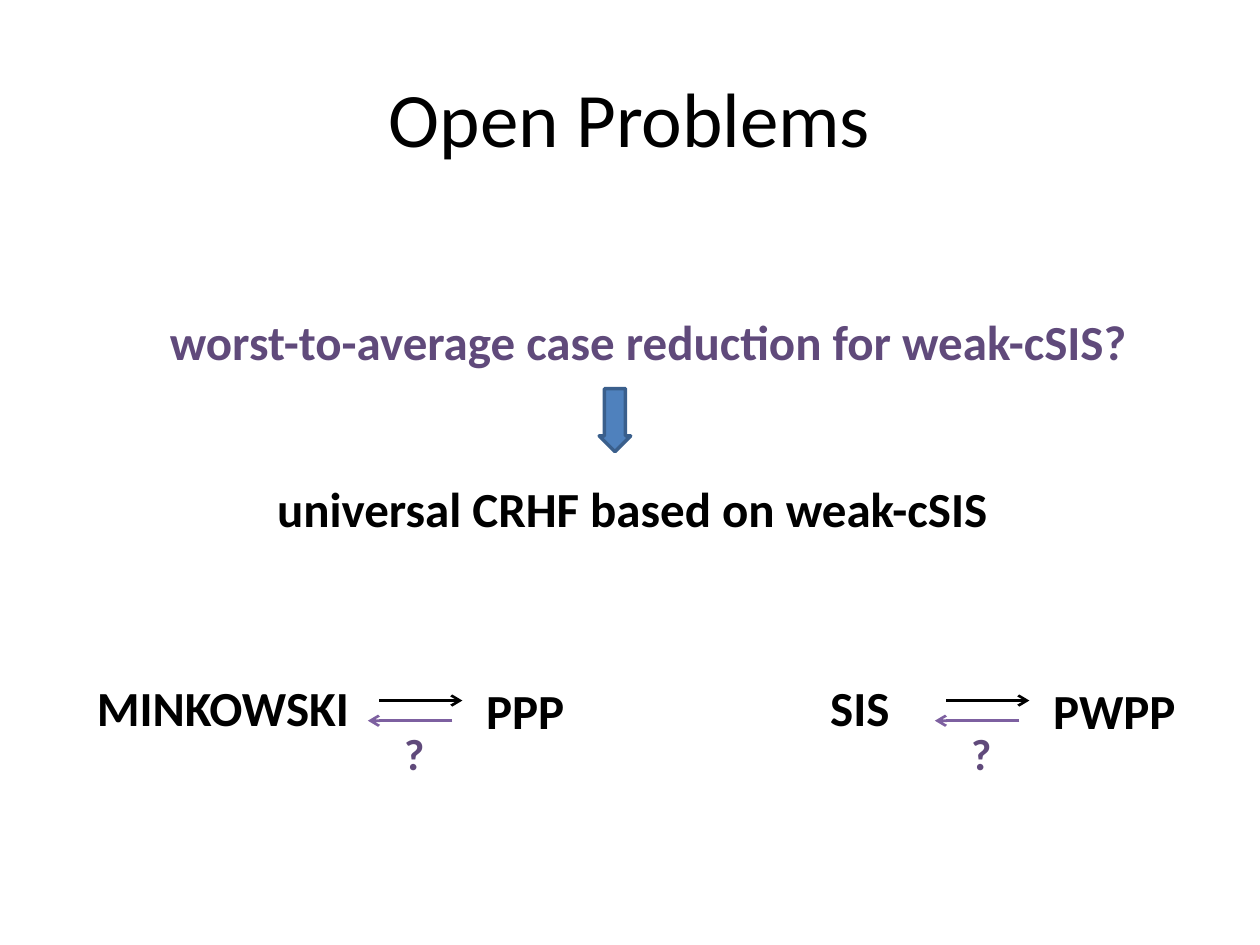
from lxml import etree
from pptx import Presentation
from pptx.dml.color import RGBColor
from pptx.enum import shapes, text
from pptx.oxml.ns import qn
from pptx.util import Inches, Pt

BLACK, PURPLE, VIOLET = "000000", "604A7B", "7D60A0"
BLUE, DARK_BLUE = "4F81BD", "3A5F8C"


def color(value):
    return RGBColor.from_string(value)


def add_text(page, words, left, top, width, height=0.57, size=28, ink=BLACK,
             bold=True, wrap=False, align=text.PP_ALIGN.LEFT,
             anchor=text.MSO_ANCHOR.TOP):
    box = page.shapes.add_textbox(*map(Inches, (left, top, width, height)))
    frame = box.text_frame
    frame.word_wrap = wrap
    frame.vertical_anchor = anchor
    if not wrap:
        frame.auto_size = text.MSO_AUTO_SIZE.SHAPE_TO_FIT_TEXT
    para = frame.paragraphs[0]
    para.alignment = align
    span = para.add_run()
    span.text = words
    span.font.name = "Calibri"
    span.font.size = Pt(size)
    span.font.bold = bold
    span.font.color.rgb = color(ink)


def add_thin_arrow(page, start, end, y, ink):
    arrow = page.shapes.add_connector(
        shapes.MSO_CONNECTOR.STRAIGHT, *map(Inches, (start, y, end, y)))
    arrow.line.color.rgb = color(ink)
    arrow.line.width = Pt(1.5)
    etree.SubElement(arrow.line._get_or_add_ln(), qn("a:tailEnd"), type="arrow")
    etree.SubElement(arrow._element.spPr, qn("a:effectLst"))


def add_block_arrow(page):
    arrow = page.shapes.add_shape(
        shapes.MSO_SHAPE.RIGHT_ARROW, *map(Inches, (4.63, 3.21, 0.5, 0.25)))
    arrow.rotation = 90
    arrow.adjustments[0] = 0.67
    arrow.adjustments[1] = 0.5
    arrow.shadow.inherit = False
    arrow.fill.solid()
    arrow.fill.fore_color.rgb = color(BLUE)
    arrow.line.color.rgb = color(DARK_BLUE)
    arrow.line.width = Pt(2)


def add_reduction(page, x, problem, problem_left, problem_width,
                  complexity, complexity_width):
    """Problem and class joined by a known and an open reduction; x is the leftmost arrow tip."""
    add_text(page, problem, problem_left, 5.33, problem_width)
    add_text(page, complexity, x + 0.84, 5.35, complexity_width)
    add_thin_arrow(page, x + 0.09, x + 0.75, 5.56, BLACK)
    add_thin_arrow(page, x + 0.67, x, 5.72, VIOLET)
    add_text(page, "?", x + 0.19, 5.72, 0.36, 0.52, size=25, ink=PURPLE)


def main():
    deck = Presentation()
    deck.slide_width, deck.slide_height = Inches(10), Inches(7.5)
    page = deck.slides.add_slide(deck.slide_layouts[6])

    # Title
    add_text(page, "Open Problems", 0.5, 0.3, 9, 1.25, size=44, bold=False,
             wrap=True, align=text.PP_ALIGN.CENTER,
             anchor=text.MSO_ANCHOR.MIDDLE)

    # Open question and what would follow from it
    add_text(page, "worst-to-average case reduction for weak-cSIS?",
             1.25, 2.42, 7.91, ink=PURPLE)
    add_block_arrow(page)
    add_text(page, "universal CRHF based on weak-cSIS", 2.1, 3.75, 5.92)

    # Pairs of problem and complexity class
    add_reduction(page, 2.92, "MINKOWSKI", 0.67, 2.23, "PPP", 0.83)
    add_reduction(page, 7.42, "SIS", 6.49, 0.68, "PWPP", 1.18)

    deck.save("out.pptx")


if __name__ == "__main__":
    main()
